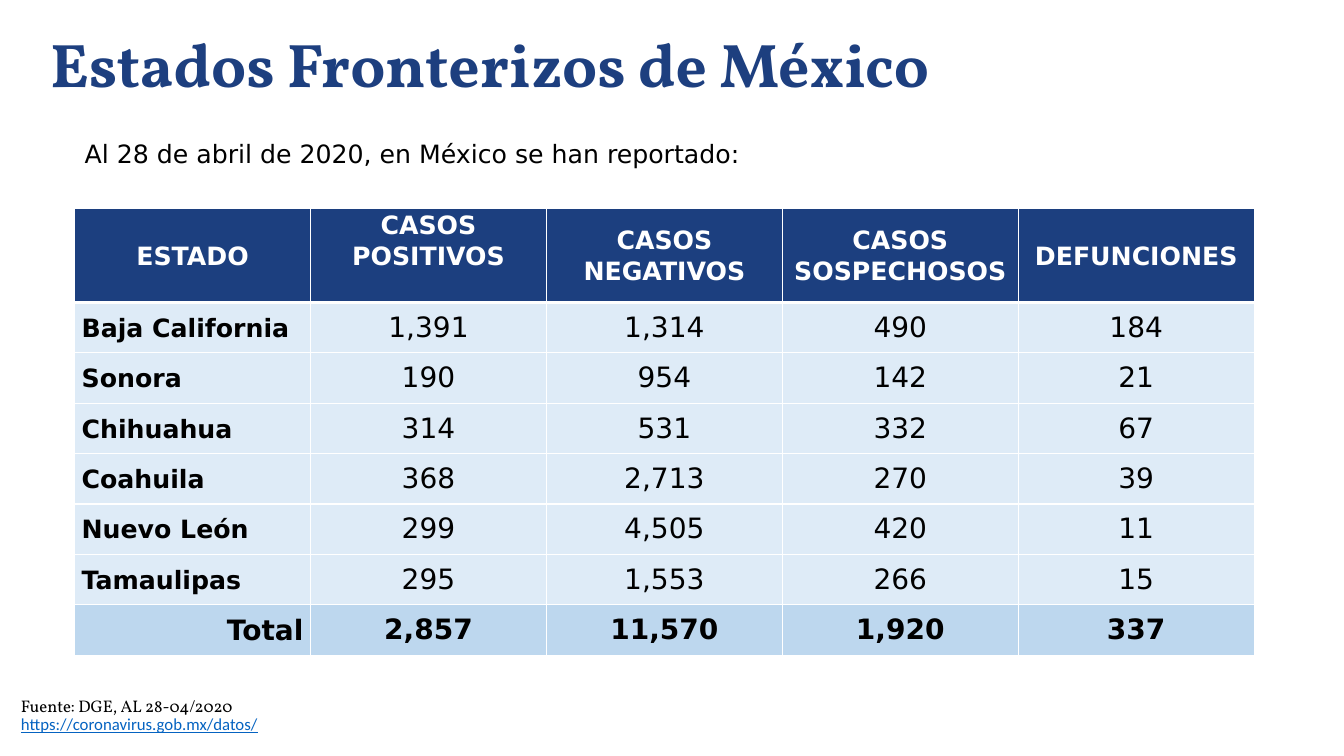
from lxml import etree
from pptx import Presentation
from pptx import util as u
from pptx.dml.color import RGBColor
from pptx.enum import text
from pptx.oxml import ns

W, H = 13.33, 7.5
COLORS = {"title": "1D3F7F", "header": "1C3F7F", "row": "DEEBF7", "total": "BDD7EE",
          "white": "FFFFFF", "black": "000000", "link": "0563C1"}
SANS, SERIF = "DejaVu Sans", "Vollkorn"
AL, ANC = text.PP_ALIGN, text.MSO_ANCHOR


def add_run(p, words, size, font, color, bold=False):
    r = p.add_run()
    r.text = words
    r.font.size = u.Pt(size)
    r.font.name = font
    r.font.bold = bold
    r.font.color.rgb = RGBColor.from_string(COLORS[color])
    return r


def place(sp, left, top, width, height):
    sp.left, sp.top = u.Inches(left), u.Inches(top)
    sp.width, sp.height = u.Inches(width), u.Inches(height)


prs = Presentation()
prs.slide_width, prs.slide_height = u.Inches(W), u.Inches(H)
s = prs.slides.add_slide(prs.slide_layouts[1])

sp = s.shapes.title
place(sp, 0.03 * W, 0.05, 11.5, 1.24)
sp.text_frame.vertical_anchor = ANC.MIDDLE
p = sp.text_frame.paragraphs[0]
p.alignment, p.line_spacing = AL.LEFT, 0.9
add_run(p, "Estados Fronterizos de México", 44, SERIF, "title", True)

sp = s.placeholders[1]
place(sp, 0.74, 1.29, 10.8, 4.85)
p = sp.text_frame.paragraphs[0]
p.alignment, p.line_spacing, p.space_before = AL.JUSTIFY, 1.1, u.Pt(4)
pPr = p._p.get_or_add_pPr()
pPr.set("marL", "0")
pPr.set("indent", "0")
etree.SubElement(pPr, ns.qn("a:buNone"))
add_run(p, "Al 28 de abril de 2020, en México se han reportado:", 18, SANS, "black")

rows = [
    ["ESTADO", "CASOS POSITIVOS", "CASOS NEGATIVOS", "CASOS SOSPECHOSOS", "DEFUNCIONES"],
    ["Baja California", "1,391", "1,314", "490", "184"],
    ["Sonora", "190", "954", "142", "21"],
    ["Chihuahua", "314", "531", "332", "67"],
    ["Coahuila", "368", "2,713", "270", "39"],
    ["Nuevo León", "299", "4,505", "420", "11"],
    ["Tamaulipas", "295", "1,553", "266", "15"],
    ["Total", "2,857", "11,570", "1,920", "337"],
]
COL_W, ROW_H, HEAD_H = 2.34, 0.5, 0.93
last = len(rows) - 1
tbl = s.shapes.add_table(len(rows), len(rows[0]), u.Inches(0.74), u.Inches(2.07),
                         u.Inches(COL_W * len(rows[0])), u.Inches(HEAD_H + ROW_H * last)).table
for col in tbl.columns:
    col.width = u.Inches(COL_W)

for i, values in enumerate(rows):
    tbl.rows[i].height = u.Inches(ROW_H if i else HEAD_H)
    for j, value in enumerate(values):
        cell = tbl.cell(i, j)
        label = i == 0 or j == 0
        cell.vertical_anchor = ANC.TOP if (i, j) == (0, 1) else ANC.MIDDLE
        if label:
            cell.margin_left = cell.margin_right = u.Inches(0.07)
            cell.margin_top = cell.margin_bottom = 0
        tcPr = cell._tc.get_or_add_tcPr()
        for side in "LRTB":
            thick = (i, side) in ((0, "B"), (1, "T"))
            ln = etree.SubElement(tcPr, ns.qn("a:ln" + side), w=str(u.Pt(3 if thick else 1)))
            line_fill = etree.SubElement(ln, ns.qn("a:solidFill"))
            etree.SubElement(line_fill, ns.qn("a:srgbClr"), val=COLORS["white"])
        cell.fill.solid()
        shade = "header" if i == 0 else "total" if i == last else "row"
        cell.fill.fore_color.rgb = RGBColor.from_string(COLORS[shade])
        p = cell.text_frame.paragraphs[0]
        p.alignment = AL.CENTER if i == 0 or j else AL.RIGHT if i == last else AL.LEFT
        p.line_spacing = 1.07 if label else 1.0
        add_run(p, value, 18 if label and i < last else 20, SANS,
                "black" if i else "white", label or i == last)

sp = s.shapes.add_textbox(0, 0, 0, 0)
place(sp, 0.11, 6.73, 9.79, 0.1 * H)
tf = sp.text_frame
tf.word_wrap = True
tf.vertical_anchor = ANC.MIDDLE
p = tf.paragraphs[0]
p.line_spacing = 0.9
add_run(p, "Fuente: DGE, AL 28-04/2020", 12, SERIF, "black")
p = tf.add_paragraph()
p.line_spacing = 0.9
r = add_run(p, "https://coronavirus.gob.mx/datos/", 12, "Calibri", "link")
r.font.underline = True

prs.save("out.pptx")
